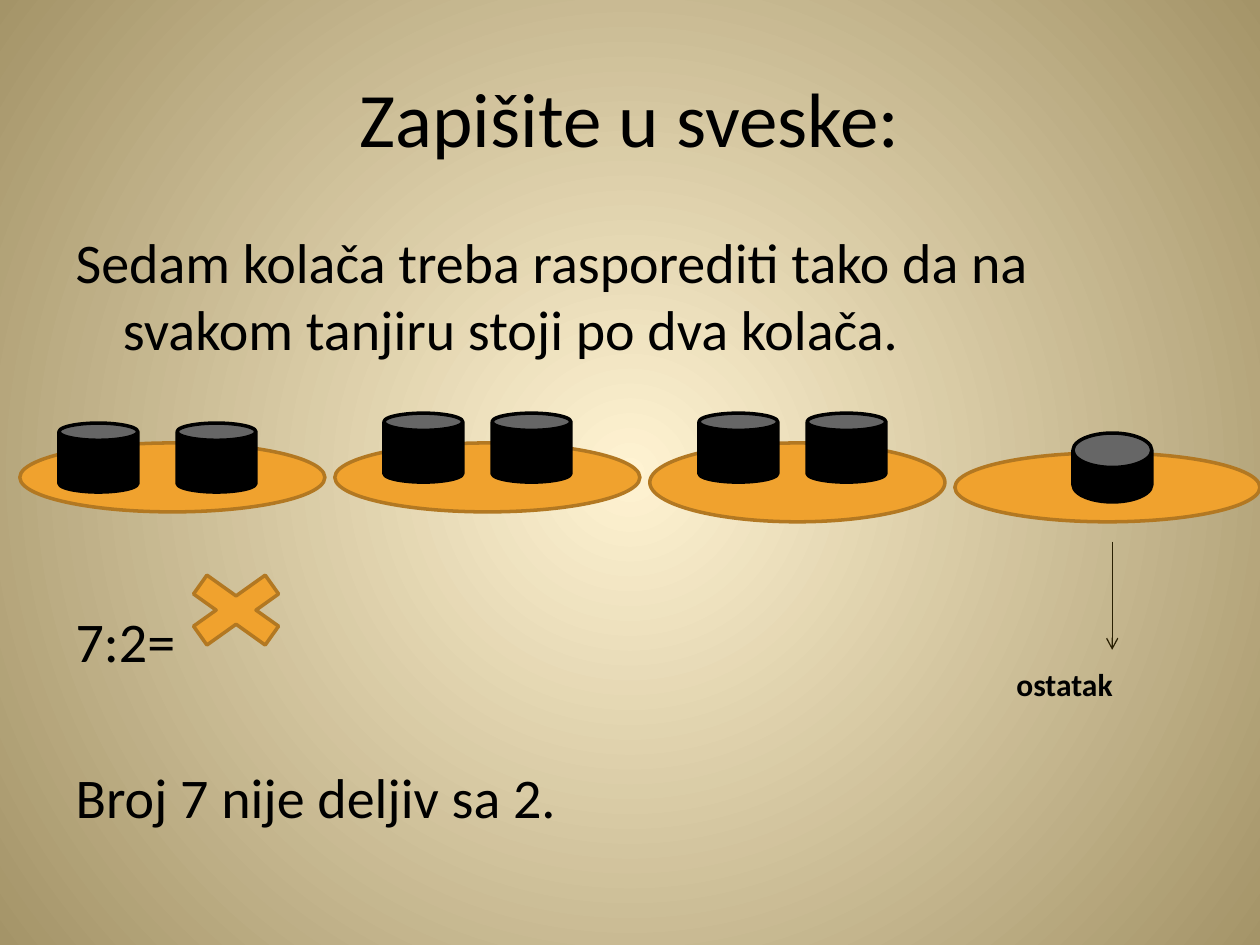
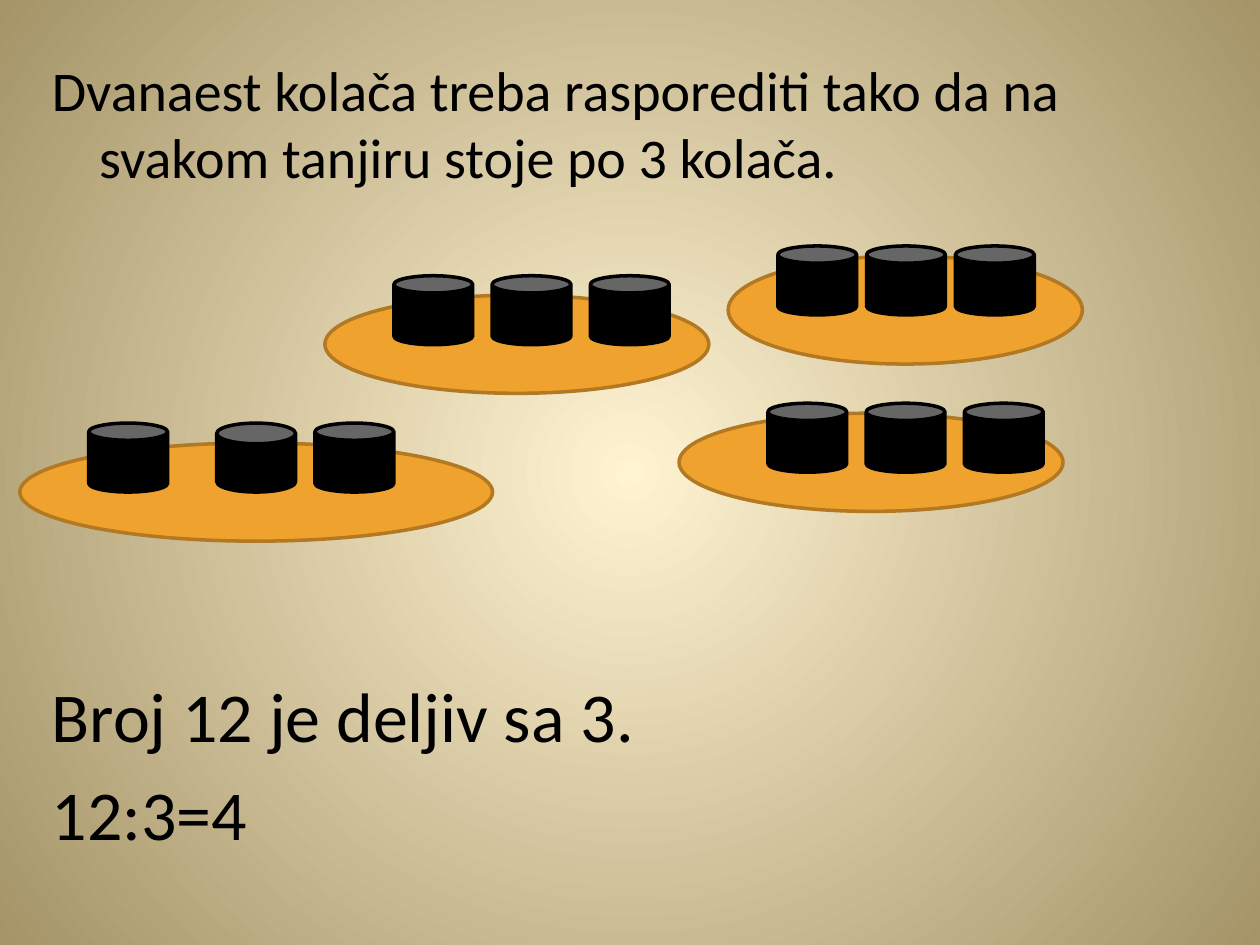
"""Build two slides on sharing cakes among plates."""
from dataclasses import dataclass
from typing import Any

import lxml.etree
import pptx
import pptx.dml.color
import pptx.enum.shapes
import pptx.enum.text
import pptx.oxml
import pptx.oxml.ns
import pptx.util

Cm = pptx.util.Cm
Pt = pptx.util.Pt
Kind = pptx.enum.shapes.MSO_SHAPE
Rgb = pptx.dml.color.RGBColor
qn = pptx.oxml.ns.qn


@dataclass(frozen=True)
class Theme:
    font: str = "Calibri"
    ink: str = "000000"
    glow: str = "FFF3D2"
    edge: str = "A49468"
    plate: str = "F0A22E"
    rim: str = "B27822"
    arrow: str = "2A2003"
    title: int = 44
    body: int = 32
    large: int = 40
    label: int = 18
    line: float = 2
    thin: float = 0.75


@dataclass(frozen=True)
class Box:
    left: float
    top: float
    width: float
    height: float

    def cm(self) -> tuple[Any, ...]:
        return tuple(Cm(n) for n in (self.left, self.top, self.width, self.height))


@dataclass(frozen=True)
class Cake:
    left: float
    bend: float = 0.25


@dataclass(frozen=True)
class Plate:
    box: Box
    top: float
    cakes: tuple[Cake, ...]


@dataclass(frozen=True)
class Line:
    text: str
    size: int
    gap: float | None = None


THEME = Theme()
WIDE, HIGH = 1.59, 1.39


def row(left: float, step: float, count: int) -> tuple[Cake, ...]:
    return tuple(Cake(left + step * i) for i in range(count))


FIRST = (
    Plate(Box(0.4, 8.93, 6.15, 1.39), 8.53, row(1.19, 2.38, 2)),
    Plate(Box(6.75, 8.93, 6.15, 1.39), 8.33, row(7.74, 2.18, 2)),
    Plate(Box(13.1, 8.93, 5.95, 1.59), 8.33, row(14.09, 2.18, 2)),
    Plate(Box(19.25, 9.13, 6.15, 1.39), 8.73, (Cake(21.63, 0.5),)),
)
SECOND = (
    Plate(Box(0.4, 8.93, 9.53, 1.98), 8.53,
          (Cake(1.79), Cake(4.37, 0.3), Cake(6.35))),
    Plate(Box(6.55, 5.95, 7.74, 1.98), 5.56, row(7.94, 1.98, 3)),
    Plate(Box(14.68, 5.16, 7.14, 2.18), 4.96, row(15.68, 1.79, 3)),
    Plate(Box(13.69, 8.33, 7.74, 1.98), 8.13, row(15.48, 1.98, 3)),
)


def style(para: Any, size: int, bold: bool = False) -> None:
    font = para.font
    font.name, font.size, font.bold = THEME.font, Pt(size), bold
    font.color.rgb = Rgb.from_string(THEME.ink)


def place(shape: Any, box: Box) -> None:
    shape.left, shape.top, shape.width, shape.height = box.cm()


def paint(master: Any) -> None:
    fill = master.background.fill
    fill.gradient()
    for stop, tint in zip(fill.gradient_stops, (THEME.glow, THEME.edge)):
        stop.color.rgb = Rgb.from_string(tint)
    grad = master.element.find(".//" + qn("p:bg")).find(".//" + qn("a:gradFill"))
    grad.remove(grad.find(qn("a:lin")))
    ring = lxml.etree.SubElement(grad, qn("a:path"), {"path": "circle"})
    sides = {side: "50000" for side in "ltrb"}
    lxml.etree.SubElement(ring, qn("a:fillToRect"), sides)


def write(shape: Any, box: Box, lines: tuple[Line, ...]) -> None:
    place(shape, box)
    frame = shape.text_frame
    frame.auto_size = pptx.enum.text.MSO_AUTO_SIZE.NONE
    for i, line in enumerate(lines):
        para = frame.paragraphs[0] if i == 0 else frame.add_paragraph()
        para.text = line.text
        if line.gap is not None:
            para.space_before = Pt(line.gap)
        style(para, line.size)
        props = para._p.get_or_add_pPr()
        none = pptx.oxml.parse_xml(
            f'<a:buNone {pptx.oxml.ns.nsdecls("a")}/>')
        props.find(qn("a:defRPr")).addprevious(none)


def draw(slide: Any, kind: Any, box: Box, fill: str, line: str) -> Any:
    shape = slide.shapes.add_shape(kind, *box.cm())
    shape.shadow.inherit = False
    shape.fill.solid()
    shape.fill.fore_color.rgb = Rgb.from_string(fill)
    shape.line.color.rgb = Rgb.from_string(line)
    shape.line.width = Pt(THEME.line)
    return shape


def serve(slide: Any, plates: tuple[Plate, ...]) -> None:
    for plate in plates:
        draw(slide, Kind.OVAL, plate.box, THEME.plate, THEME.rim)
        for cake in plate.cakes:
            box = Box(cake.left, plate.top, WIDE, HIGH)
            can = draw(slide, Kind.CAN, box, THEME.ink, THEME.ink)
            can.adjustments[0] = cake.bend


def point(slide: Any, left: float, top: float, end: float) -> None:
    arrow = slide.shapes.add_connector(
        pptx.enum.shapes.MSO_CONNECTOR.STRAIGHT,
        Cm(left), Cm(top), Cm(left), Cm(end))
    arrow.line.color.rgb = Rgb.from_string(THEME.arrow)
    arrow.line.width = Pt(THEME.thin)
    lxml.etree.SubElement(arrow.line._get_or_add_ln(), qn("a:tailEnd"),
                          {"type": "arrow"})
    lxml.etree.SubElement(arrow._element.spPr, qn("a:effectLst"))


def label(slide: Any, text: str, box: Box) -> None:
    frame = slide.shapes.add_textbox(*box.cm()).text_frame
    frame.word_wrap = False
    frame.auto_size = pptx.enum.text.MSO_AUTO_SIZE.SHAPE_TO_FIT_TEXT
    para = frame.paragraphs[0]
    para.text = text
    style(para, THEME.label, True)


def seven(slide: Any) -> None:
    title = slide.shapes.title
    place(title, Box(1.27, 0.76, 22.86, 3.18))
    title.text_frame.text = "Zapišite u sveske:"
    style(title.text_frame.paragraphs[0], THEME.title)
    write(slide.placeholders[1], Box(1.27, 4.45, 22.86, 12.57), (
        Line("Sedam kolača treba rasporediti tako da na svakom tanjiru "
             "stoji po dva kolača.", THEME.body),
        Line("7:2=", THEME.body, 140),
        Line("Broj 7 nije deljiv sa 2.", THEME.body, 51),
    ))
    serve(slide, FIRST)
    draw(slide, Kind.MATH_MULTIPLY, Box(3.37, 11.31, 2.78, 1.98),
         THEME.plate, THEME.rim)
    point(slide, 22.42, 10.92, 13.1)
    label(slide, "ostatak", Box(20.24, 13.28, 2.46, 1.02))


def twelve(slide: Any) -> None:
    title = slide.shapes.title.element
    title.getparent().remove(title)
    write(slide.placeholders[1], Box(0.79, 0.99, 23.62, 16.87), (
        Line("Dvanaest kolača treba rasporediti tako da na svakom tanjiru "
             "stoje po 3 kolača.", THEME.body),
        Line("Broj 12 je deljiv sa 3.", THEME.large, 276),
        Line("12:3=4", THEME.large),
    ))
    serve(slide, SECOND)


def main() -> None:
    deck = pptx.Presentation()
    deck.slide_width, deck.slide_height = Cm(25.4), Cm(19.05)
    paint(deck.slide_master)
    for build in (seven, twelve):
        build(deck.slides.add_slide(deck.slide_layouts[1]))
    deck.save("out.pptx")


if __name__ == "__main__":
    main()
